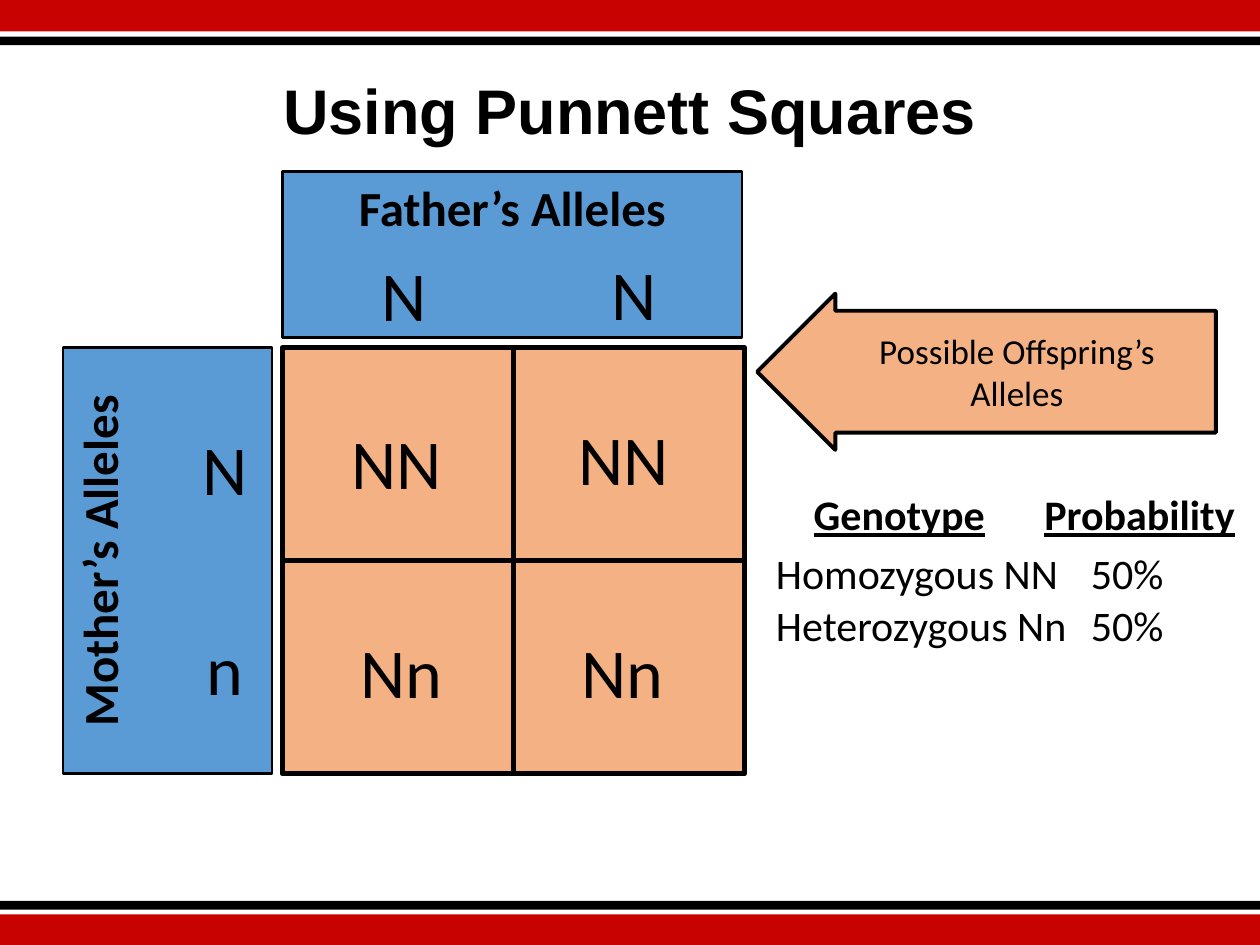
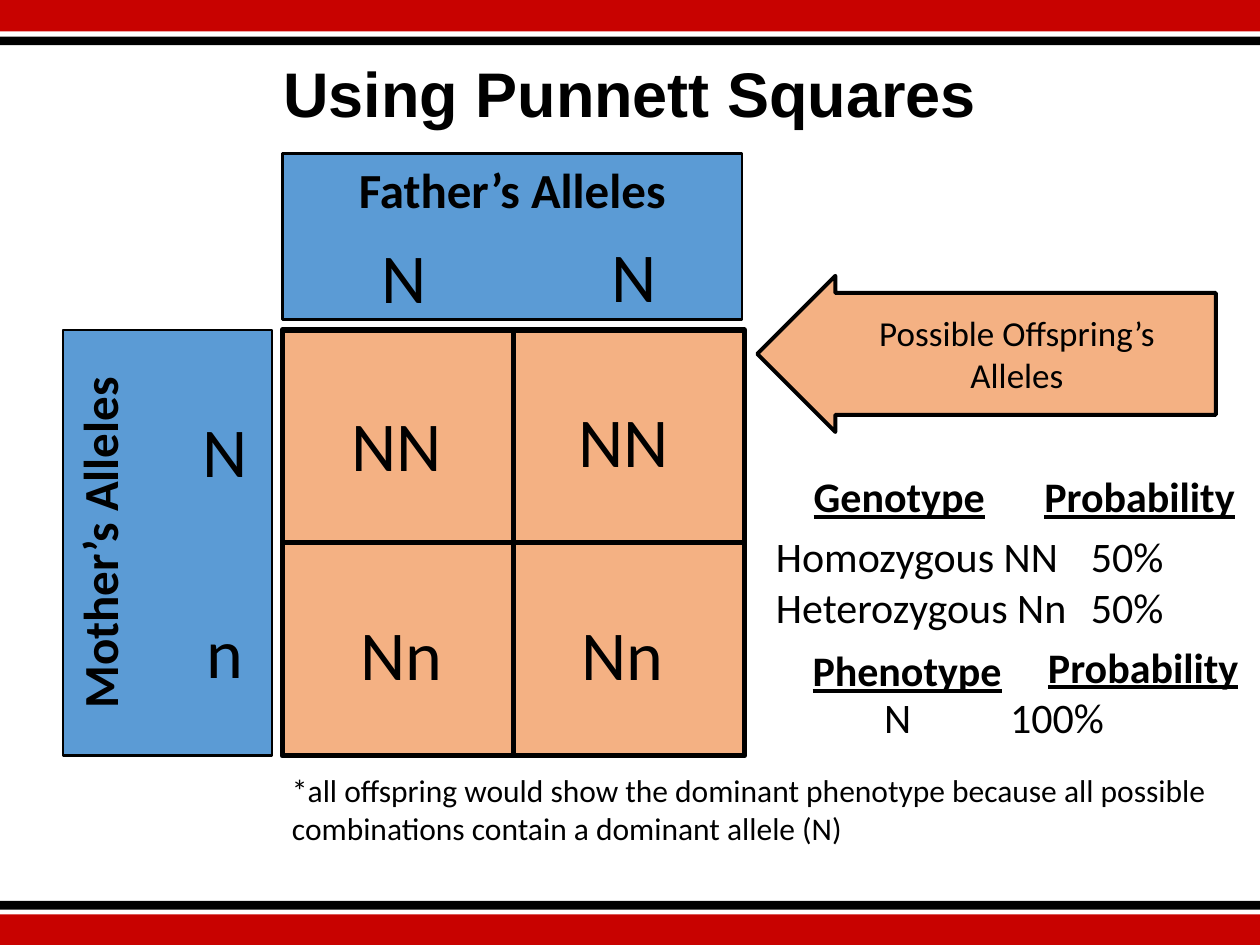
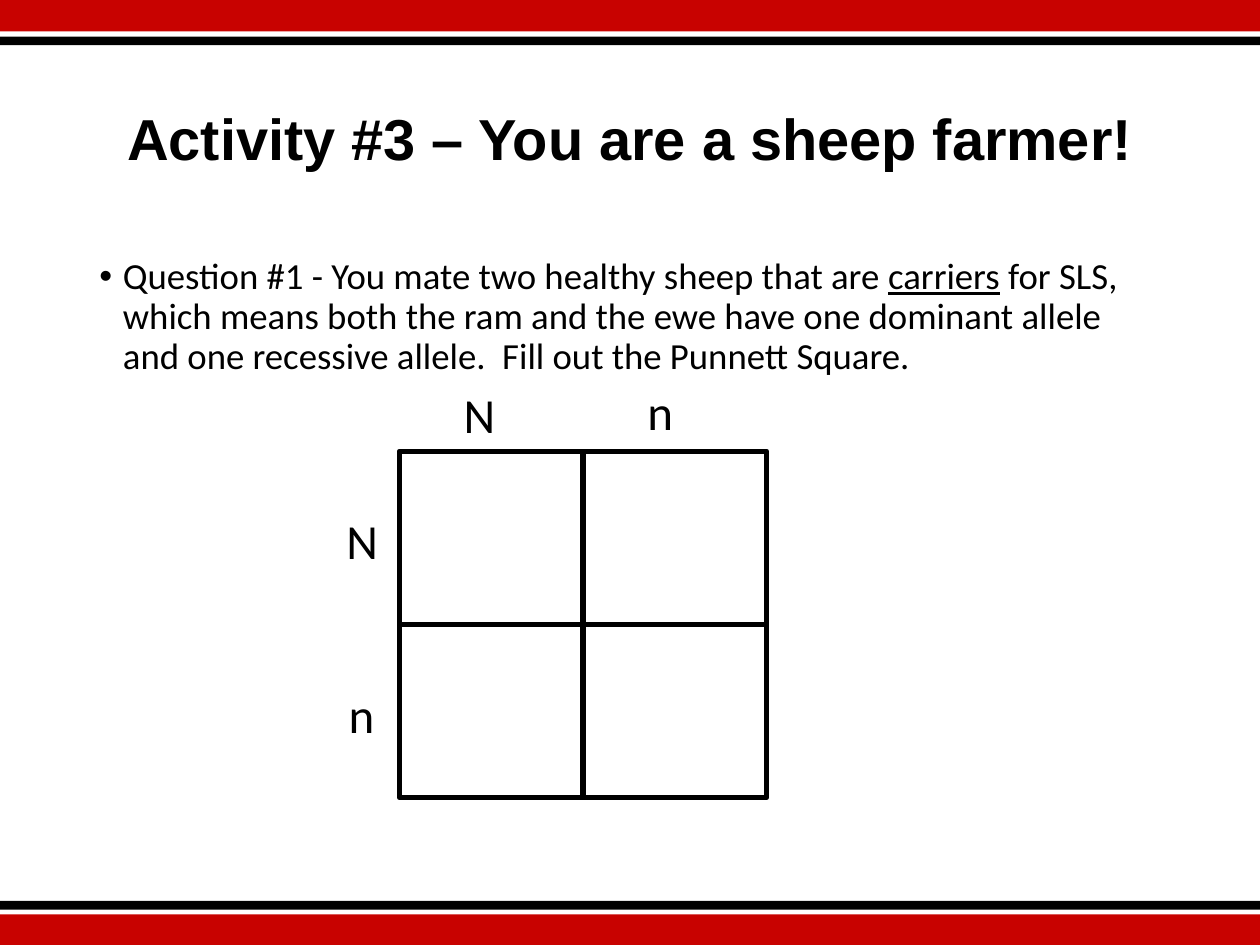
"""Build three slides on Punnett squares."""
from lxml import etree
from pptx import Presentation
from pptx.dml.color import RGBColor
from pptx.enum.shapes import MSO_CONNECTOR, MSO_SHAPE
from pptx.enum.text import MSO_ANCHOR, PP_ALIGN
from pptx.oxml.ns import qn
from pptx.util import Pt

RECT, ARROW = MSO_SHAPE.RECTANGLE, MSO_SHAPE.LEFT_ARROW
STRAIGHT = MSO_CONNECTOR.STRAIGHT
TOP, MIDDLE = MSO_ANCHOR.TOP, MSO_ANCHOR.MIDDLE
LEFT, CENTER = PP_ALIGN.LEFT, PP_ALIGN.CENTER
COLORS = {"red": "C80200", "black": "000000", "peach": "F4B183", "blue": "5B9BD5"}


def text(sp, content, size=24, font="Calibri", bold=False, underline=False,
         align=LEFT, anchor=TOP, spacing=1.0, wrap=True):
    tf = sp.text_frame
    tf.word_wrap, tf.vertical_anchor = wrap, anchor
    p = tf.paragraphs[0]
    p.alignment, p.line_spacing = align, spacing
    r = p.add_run()
    r.text = content
    r.font.size, r.font.name = Pt(size), font
    r.font.bold, r.font.underline = bold, underline
    r.font.color.rgb = RGBColor.from_string(COLORS["black"])


def box(s, at, kind=None, fill=None, line=None):
    at = [Pt(v) for v in at]
    if kind is None:
        return s.shapes.add_textbox(*at)
    sp = s.shapes.add_shape(kind, *at)
    sp.shadow.inherit = False
    if fill:
        sp.fill.solid()
        sp.fill.fore_color.rgb = RGBColor.from_string(COLORS[fill])
    else:
        sp.fill.background()
    if line:
        sp.line.width = Pt(line)
        sp.line.color.rgb = RGBColor.from_string(COLORS["black"])
    else:
        sp.line.fill.background()
    return sp


prs = Presentation()
prs.slide_width, prs.slide_height = Pt(720), Pt(540)
layout = prs.slide_layouts[5]

pages = [
    ("Using Punnett Squares", 36, 28.8, 73.4, (161.3, 198.7, 264.2, 243.4), "peach"),
    ("Using Punnett Squares", 36, 18.6, 73.4, (161.3, 188.5, 264.2, 243.4), "peach"),
    ("Activity #3 – You are a sheep farmer!", 33, 28.8, 104.4,
     (228.2, 257.8, 209.9, 198), None),
]
for title, size, top, height, grid, fill in pages:
    s = prs.slides.add_slide(layout)
    sp = s.shapes.title
    sp.left, sp.top, sp.width, sp.height = Pt(49.7), Pt(top), Pt(620.6), Pt(height)
    text(sp, title, size=size, font="Arial", bold=True, align=CENTER,
         anchor=MIDDLE, spacing=0.9)
    square = box(s, grid, RECT, fill, 3)
    for start, end in ((1, 3), (0, 2)):
        line = s.shapes.add_connector(STRAIGHT, 0, 0, 0, 0)
        line.begin_connect(square, start)
        line.end_connect(square, end)
        line.line.width = Pt(3)
        line.line.color.rgb = RGBColor.from_string(COLORS["black"])
        etree.SubElement(line.element.spPr, qn("a:effectLst"))

alleles = [
    ("N", 203.8, 140.4, 54, CENTER), ("N", 335.5, 139.7, 54, CENTER),
    ("n", 101.5, 354.2, 54, CENTER), ("N", 101.5, 239.8, 54, CENTER),
    ("Nn", 325.4, 355.7, 61.2, LEFT), ("Nn", 198.7, 355.7, 64.8, LEFT),
    ("NN", 323.3, 234, 69.8, LEFT), ("NN", 193.7, 236.2, 76.3, LEFT),
]
genotypes = [("Homozygous NN\t50%", 309.6), ("Heterozygous Nn\t50%", 339.1)]
headings = [("Genotype", 457.9, 113), ("Probability", 589.7, 124.6)]
for s, up in zip(prs.slides, (0, 10.2)):
    father = box(s, (161.3, 97.9 - up, 262.8, 95), RECT, "blue", 1.5)
    text(father, "Father’s Alleles", size=28, bold=True, align=CENTER)
    mother = box(s, (36, 198.7 - up, 119.5, 243.4), RECT, "blue", 1.5)
    text(mother, "Mother’s Alleles", size=28, bold=True, align=CENTER)
    mother.element.txBody.bodyPr.set("vert", "vert270")
    for allele, x, y, w, align in alleles:
        text(box(s, (x, y - up, w, 55.4)), allele, size=40, align=align)
    arrow = box(s, (432.7, 167.8 - up, 262.1, 89.3), ARROW, "peach", 2.25)
    arrow.adjustments[0], arrow.adjustments[1] = 0.78, 0.5
    text(arrow, "Possible Offspring’s Alleles", size=20, align=CENTER, anchor=MIDDLE)
    for genotype, y in genotypes:
        text(box(s, (436.3, y - up, 274.3, 36)), genotype, wrap=False)
    for heading, x, w in headings:
        text(box(s, (x, 275.8 - up, w, 36)), heading, bold=True, underline=True,
             wrap=False)

s = prs.slides[1]
for heading, x, y, w in (("Phenotype", 457.2, 365, 123.8),
                         ("Probability", 591.8, 362.9, 124.6)):
    text(box(s, (x, y, w, 36)), heading, bold=True, underline=True, wrap=False)
text(box(s, (498.2, 391.7, 216, 36)), "N\t\t100%")
text(box(s, (159.8, 437, 558.7, 51.1)),
     "*all offspring would show the dominant phenotype because all possible "
     "combinations contain a dominant allele (N)", size=18)

s = prs.slides[2]
question = box(s, (49.7, 144, 620.6, 342.7))
pPr = question.text_frame.paragraphs[0]._p.get_or_add_pPr()
pPr.set("marL", str(Pt(13.5)))
pPr.set("indent", str(Pt(-13.5)))
etree.SubElement(pPr, qn("a:buFont")).set("typeface", "Arial")
etree.SubElement(pPr, qn("a:buChar")).set("char", "•")
for part, underline in (
        ("Question #1 - You mate two healthy sheep that are ", False),
        ("carriers", True),
        (" for SLS, which means both the ram and the ewe have one dominant allele "
         "and one recessive allele.  Fill out the Punnett Square.", False)):
    text(question, part, size=21, underline=underline, spacing=0.9)
for allele, x, y in (("N", 257.8, 216), ("n", 362.9, 214.6),
                     ("n", 192.2, 387.4), ("N", 190.8, 288)):
    text(box(s, (x, y, 74.9, 41)), allele, size=28)

for y, h, color in ((0, 18, "red"), (522.5, 18, "red"),
                    (20.9, 5, "black"), (514.8, 5, "black")):
    band = box(s, (0, y, 720, h), RECT, color)
    layout.shapes.element.append(band.element)

prs.save("out.pptx")
